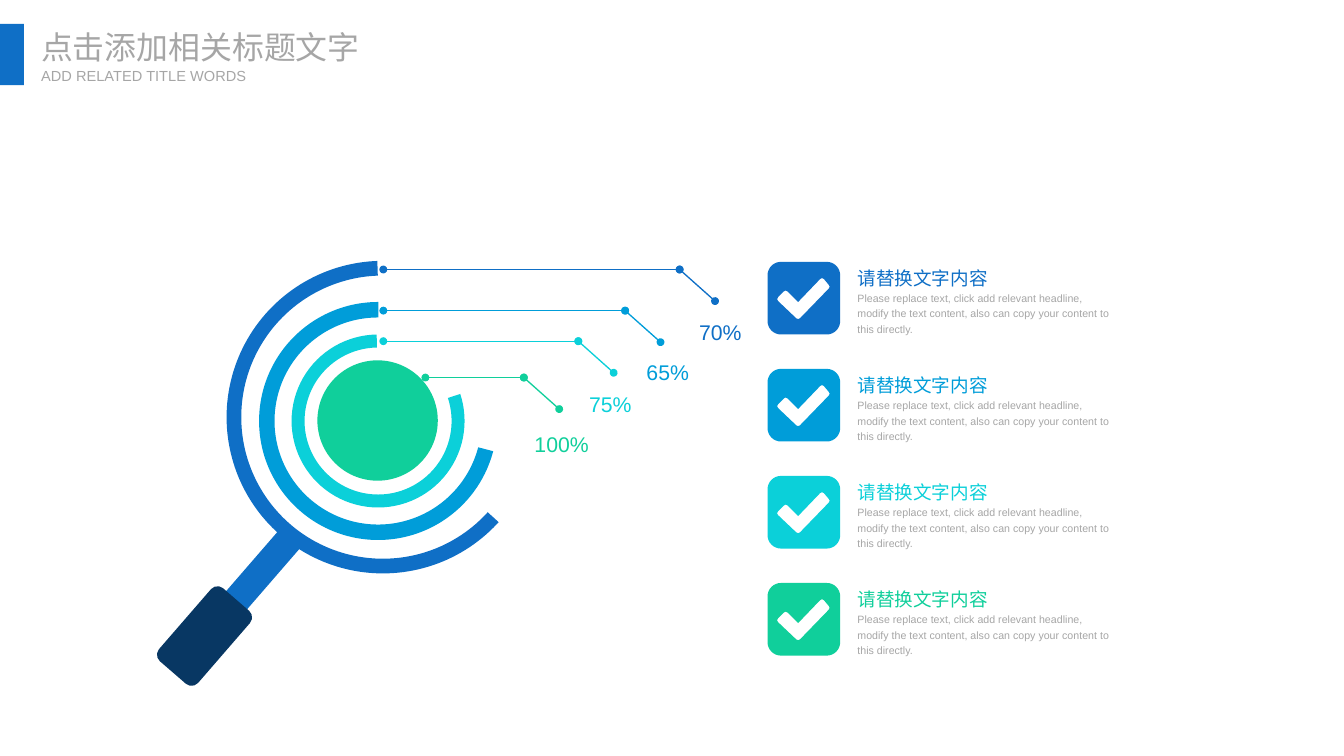
"""Build a slide with a magnifier of ring gauges and four ticked notes."""
import math

import pptx
import pptx.dml.color
import pptx.enum.shapes
import pptx.enum.text
import pptx.oxml.ns
import pptx.util
from lxml import etree

Inches = pptx.util.Inches
RGBColor = pptx.dml.color.RGBColor
Kind = pptx.enum.shapes.MSO_SHAPE
Anchor = pptx.enum.text.MSO_ANCHOR
Align = pptx.enum.text.PP_ALIGN
qn = pptx.oxml.ns.qn

BLUE = RGBColor(0x0F, 0x6F, 0xC6)
SKY = RGBColor(0x00, 0x9D, 0xD9)
AQUA = RGBColor(0x0B, 0xD0, 0xD9)
GREEN = RGBColor(0x10, 0xCF, 0x9B)
NAVY = RGBColor(0x08, 0x37, 0x63)
GRAY = RGBColor(0xA6, 0xA6, 0xA6)
COLORS = [BLUE, SKY, AQUA, GREEN]
LATIN, HAN = "Arial", "Noto Sans CJK SC"
BODY = ("Please replace text, click add relevant headline, modify the text "
        "content, also can copy your content to this directly.")

deck = pptx.Presentation()
deck.slide_width, deck.slide_height = Inches(14.06), Inches(7.91)
slide = deck.slides.add_slide(deck.slide_layouts[6])
shapes = slide.shapes


def paint(shape, color, turn=0):
    shape.shadow.inherit = False
    shape.fill.solid()
    shape.fill.fore_color.rgb = color
    shape.line.fill.background()
    shape.rotation = turn


def write(text, box, size, color, font=LATIN, wrap=False, anchor=Anchor.TOP, **para):
    frame = shapes.add_textbox(*map(Inches, box)).text_frame
    style = {"margin_left": 0, "margin_top": 0, "margin_right": 0,
             "margin_bottom": 0, "word_wrap": wrap, "vertical_anchor": anchor,
             "auto_size": pptx.enum.text.MSO_AUTO_SIZE.SHAPE_TO_FIT_TEXT}
    for name, value in style.items():
        setattr(frame, name, value)
    line = frame.paragraphs[0]
    for name, value in para.items():
        setattr(line, name, value)
    run = line.add_run()
    run.text = text
    for name, value in {"size": pptx.util.Pt(size), "name": font}.items():
        setattr(run.font, name, value)
    run.font.color.rgb = color
    etree.SubElement(run.font._element, qn("a:ea"), typeface=HAN)


parts = [
    (Kind.BLOCK_ARC, (2.71, 3.16, 2.49, 2.49), 45, SKY, (197.83, 135.07, 0.065)),
    (Kind.RECTANGLE, (2.53, 5.42, 0.29, 1.26), 40.9, BLUE, ()),
    (Kind.ROUNDED_RECTANGLE, (1.87, 6.15, 0.54, 1.01), 40.9, NAVY, ()),
    (Kind.BLOCK_ARC, (2.37, 2.73, 3.27, 3.27), 45, BLUE, (214.33, 133.78, 0.047)),
    (Kind.BLOCK_ARC, (3.05, 3.5, 1.81, 1.81), 45, AQUA, (178.06, 134.45, 0.075)),
    (Kind.OVAL, (3.32, 3.77, 1.26, 1.26), 45, GREEN, ()),
    (Kind.RECTANGLE, (0, 0.25, 0.25, 0.64), 0, BLUE, ()),
]
for kind, box, turn, color, bends in parts:
    part = shapes.add_shape(kind, *map(Inches, box))
    paint(part, color, turn)
    for index, bend in enumerate(bends):
        part.adjustments[index] = bend

leads = [
    ("70%", 4.01, 7.11, 2.82, (7.31, 3.32, 0.45, 0.29)),
    ("65%", 4.01, 6.54, 3.25, (6.76, 3.74, 0.45, 0.29)),
    ("75%", 4.01, 6.05, 3.57, (6.16, 4.07, 0.45, 0.29)),
    ("100%", 4.45, 5.48, 3.95, (5.59, 4.49, 0.57, 0.29)),
]
for (label, start, bend, y, box), color in zip(leads, COLORS):
    for ends in ((bend + 0.37, y + 0.33, bend, y), (bend, y, start, y)):
        lead = shapes.add_connector(
            pptx.enum.shapes.MSO_CONNECTOR.STRAIGHT, *map(Inches, ends))
        lead.line.color.rgb = color
        lead.line.width = pptx.util.Pt(1)
        stroke = lead.line._get_or_add_ln()
        for tip in ("a:headEnd", "a:tailEnd"):
            etree.SubElement(stroke, qn(tip), type="oval")
        etree.SubElement(lead._element.spPr, qn("a:effectLst"))
    write(label, box, 16, color, anchor=Anchor.BOTTOM, alignment=Align.CENTER,
          line_spacing=1.2, space_before=pptx.util.Pt(3.2))

LEFT, TOP, STEP, SIDE, ROUND = 8.03, 2.74, 1.12, 0.76, 0.14
tile = []
for corner, (x, y) in enumerate([(1, 1), (0, 1), (0, 0), (1, 0)]):
    for step in range(9):
        angle = math.radians(90 * corner + 90 * step / 8)
        tile.append((ROUND + x * (SIDE - 2 * ROUND) + ROUND * math.cos(angle),
                     ROUND + y * (SIDE - 2 * ROUND) + ROUND * math.sin(angle)))
tick = [(0.64, 0.28), (0.65, 0.26), (0.64, 0.24), (0.59, 0.18), (0.57, 0.17),
        (0.55, 0.18), (0.32, 0.42), (0.21, 0.31), (0.19, 0.3), (0.17, 0.31),
        (0.11, 0.37), (0.1, 0.39), (0.11, 0.41), (0.3, 0.59), (0.32, 0.6),
        (0.34, 0.59)]

for row, color in enumerate(COLORS):
    top = TOP + row * STEP
    outer, inner = [[(Inches(LEFT + x), Inches(top + y)) for x, y in ring]
                    for ring in (tile, tick)]
    pen = shapes.build_freeform(*outer[0])
    pen.add_line_segments(outer[1:], close=True)
    pen.move_to(*inner[0])
    pen.add_line_segments(inner[1:], close=True)
    paint(pen.convert_to_shape(), color)
    write("请替换文字内容", (8.97, top + 0.01, 1.37, 0.26), 14, color,
          line_spacing=1.2, space_before=pptx.util.Pt(2.8))
    write(BODY, (8.97, top + 0.29, 2.7, 0.48), 8, GRAY, wrap=True,
          line_spacing=1.2, space_before=pptx.util.Pt(1.6))

write("点击添加相关标题文字", (0.43, 0.29, 3.37, 0.4), 24, GRAY, font=HAN)
write("ADD RELATED TITLE WORDS", (0.43, 0.7, 2.18, 0.19), 11, GRAY)

deck.save("out.pptx")
